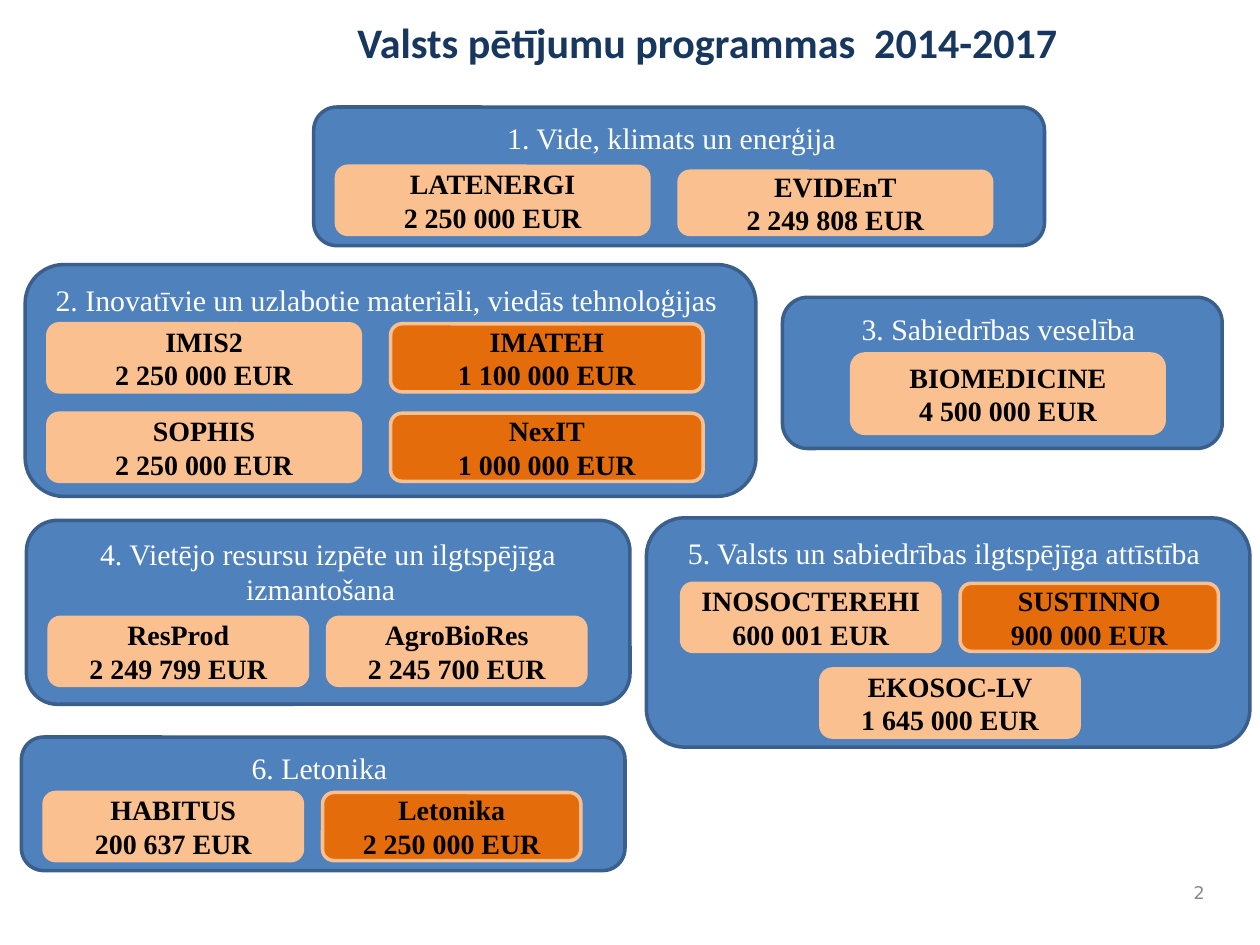
import pptx
import pptx.util
import pptx.dml.color
import pptx.enum.shapes
import pptx.enum.text
import pptx.oxml.ns

Inches = pptx.util.Inches
RGBColor = pptx.dml.color.RGBColor
PP_ALIGN = pptx.enum.text.PP_ALIGN
MSO_ANCHOR = pptx.enum.text.MSO_ANCHOR

NAVY = RGBColor(0x17, 0x37, 0x5E)
BLUE = RGBColor(0x4F, 0x81, 0xBD)
DARK_BLUE = RGBColor(0x3A, 0x5F, 0x8C)
PEACH = RGBColor(0xFA, 0xC0, 0x90)
ORANGE = RGBColor(0xE4, 0x6C, 0x0A)
WHITE = RGBColor(0xFF, 0xFF, 0xFF)
BLACK = RGBColor(0, 0, 0)
GRAY = RGBColor(0x89, 0x89, 0x89)

SERIF = "Times New Roman"
WIDE, NARROW = 2.48, 2.05
CHIP_HEIGHT = 0.54
CHIP_GAP = {WIDE: 0.24, NARROW: 0.16}

# Panel box, heading, offset of the first chip, chip width, row pitch, and rows
# of (name, funding, fill, height).
PANELS = [
    ((2.49, 0.85, 5.8, 1.1), "1. Vide, klimats un enerģija  ", (0.18, 0.47), WIDE, 0,
     [[("LATENERGI", "2 250 000 EUR", PEACH, CHIP_HEIGHT),
       ("EVIDEnT", "2 249 808 EUR", PEACH, 0.5)]]),
    ((0.2, 2.1, 5.8, 1.84), "2. Inovatīvie un uzlabotie materiāli, viedās tehnoloģijas ",
     (0.18, 0.47), WIDE, 0.71,
     [[("IMIS2", "2 250 000 EUR", PEACH, CHIP_HEIGHT),
       ("IMATEH", "1 100 000 EUR", ORANGE, CHIP_HEIGHT)],
      [("SOPHIS", "2 250 000 EUR", PEACH, CHIP_HEIGHT),
       ("NexIT", "1 000 000 EUR", ORANGE, CHIP_HEIGHT)]]),
    ((6.21, 2.36, 3.49, 1.2), "3. Sabiedrības veselība ", (0.55, 0.45), WIDE, 0,
     [[("BIOMEDICINE", "4 500 000 EUR", PEACH, 0.63)]]),
    ((0.21, 4.13, 4.79, 1.46), "4. Vietējo resursu izpēte un ilgtspējīga izmantošana  ",
     (0.18, 0.77), NARROW, 0,
     [[("ResProd", "2 249 799 EUR", PEACH, CHIP_HEIGHT),
       ("AgroBioRes", "2 245 700 EUR", PEACH, CHIP_HEIGHT)]]),
    ((5.13, 4.11, 4.79, 1.82), "5. Valsts un sabiedrības ilgtspējīga attīstība ",
     (0.28, 0.52), NARROW, 0.68,
     [[("INOSOCTEREHI", "600 001 EUR", PEACH, CHIP_HEIGHT),
       ("SUSTINNO", "900 000 EUR", ORANGE, CHIP_HEIGHT)],
      [("EKOSOC-LV", "1 645 000 EUR", PEACH, CHIP_HEIGHT)]]),
    ((0.17, 5.85, 4.79, 1.06), "6. Letonika ", (0.18, 0.44), NARROW, 0,
     [[("HABITUS", "200 637 EUR", PEACH, CHIP_HEIGHT),
       ("Letonika", "2 250 000 EUR", ORANGE, CHIP_HEIGHT)]]),
]


def format_font(font, size, name, color, bold=False):
    font.size = pptx.util.Pt(size)
    font.name = name
    font.bold = bold
    font.color.rgb = color


def write(sp, text, size, name, color, bold=False, anchor=MSO_ANCHOR.TOP):
    """Fill a shape with centred text, one paragraph per line."""
    tf = sp.text_frame
    tf.word_wrap = True
    tf.vertical_anchor = anchor
    tf.margin_left = tf.margin_right = Inches(0.1)
    tf.margin_top = tf.margin_bottom = Inches(0.05)
    for i, line in enumerate(text.split("\n")):
        p = tf.paragraphs[0] if i == 0 else tf.add_paragraph()
        p.alignment = PP_ALIGN.CENTER
        r = p.add_run()
        r.text = line
        format_font(r.font, size, name, color, bold)


def add_rounded(s, box, fill, line):
    sp = s.shapes.add_shape(pptx.enum.shapes.MSO_SHAPE.ROUNDED_RECTANGLE,
                            *map(Inches, box))
    sp.shadow.inherit = False
    sp.fill.solid()
    sp.fill.fore_color.rgb = fill
    sp.line.color.rgb = line
    sp.line.width = pptx.util.Pt(2)
    return sp


def add_title(s, box, text):
    sp = s.shapes.title
    sp.left, sp.top, sp.width, sp.height = map(Inches, box)
    write(sp, text, 24, "Calibri", NAVY, bold=True)


def add_panel(s, box, heading, offset, chip_width, row_pitch, rows):
    """Draw a heading panel; shorter rows are centred, chips share a bottom edge."""
    write(add_rounded(s, box, BLUE, DARK_BLUE), heading, 17, SERIF, WHITE)
    pitch = chip_width + CHIP_GAP[chip_width]
    columns = max(map(len, rows))
    for i, row in enumerate(rows):
        left = box[0] + offset[0] + (columns - len(row)) * pitch / 2
        bottom = box[1] + offset[1] + i * row_pitch + row[0][3]
        for j, (name, funding, fill, height) in enumerate(row):
            chip_box = (left + j * pitch, bottom - height, chip_width, height)
            write(add_rounded(s, chip_box, fill, PEACH), f"{name}\n{funding}",
                  16, SERIF, BLACK, bold=True, anchor=MSO_ANCHOR.MIDDLE)


def add_slide_number(s, box, number):
    sp = s.shapes.add_textbox(*map(Inches, box))
    write(sp, number, 10, "DejaVu Sans", GRAY, anchor=MSO_ANCHOR.MIDDLE)
    p = sp.text_frame.paragraphs[0]
    p.alignment = PP_ALIGN.RIGHT
    r = p.runs[0]._r
    r.tag = pptx.oxml.ns.qn("a:fld")
    r.set("id", "{B6F15528-21DE-4FAA-801E-634DDDAF4B2B}")
    r.set("type", "slidenum")


def main():
    prs = pptx.Presentation()
    prs.slide_width, prs.slide_height = Inches(10), Inches(7.5)
    prs.element.set("firstSlideNum", "2")
    s = prs.slides.add_slide(prs.slide_layouts[5])
    add_title(s, (2.28, 0.08, 6.67, 1.13), "Valsts pētījumu programmas  2014-2017")
    for panel in PANELS:
        add_panel(s, *panel)
    add_slide_number(s, (9.33, 6.92, 0.33, 0.33), "2")
    prs.save("out.pptx")


if __name__ == "__main__":
    main()
